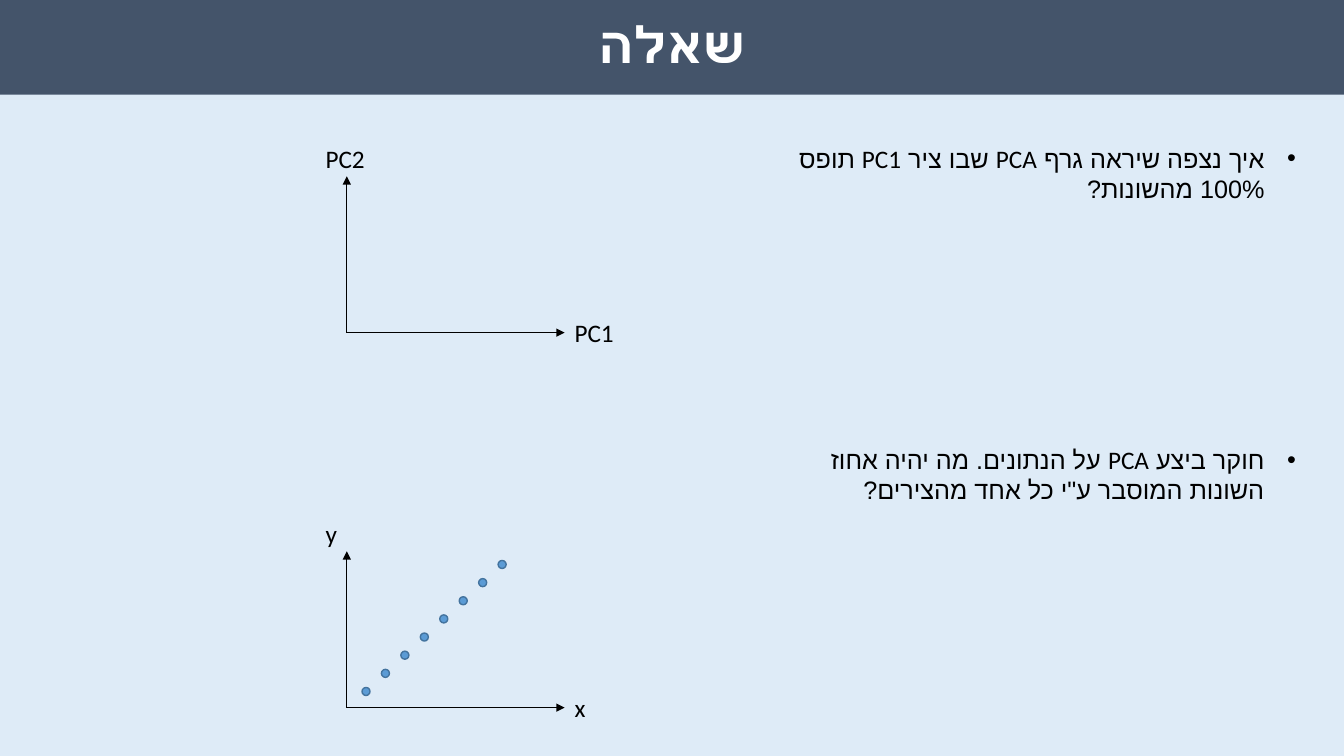
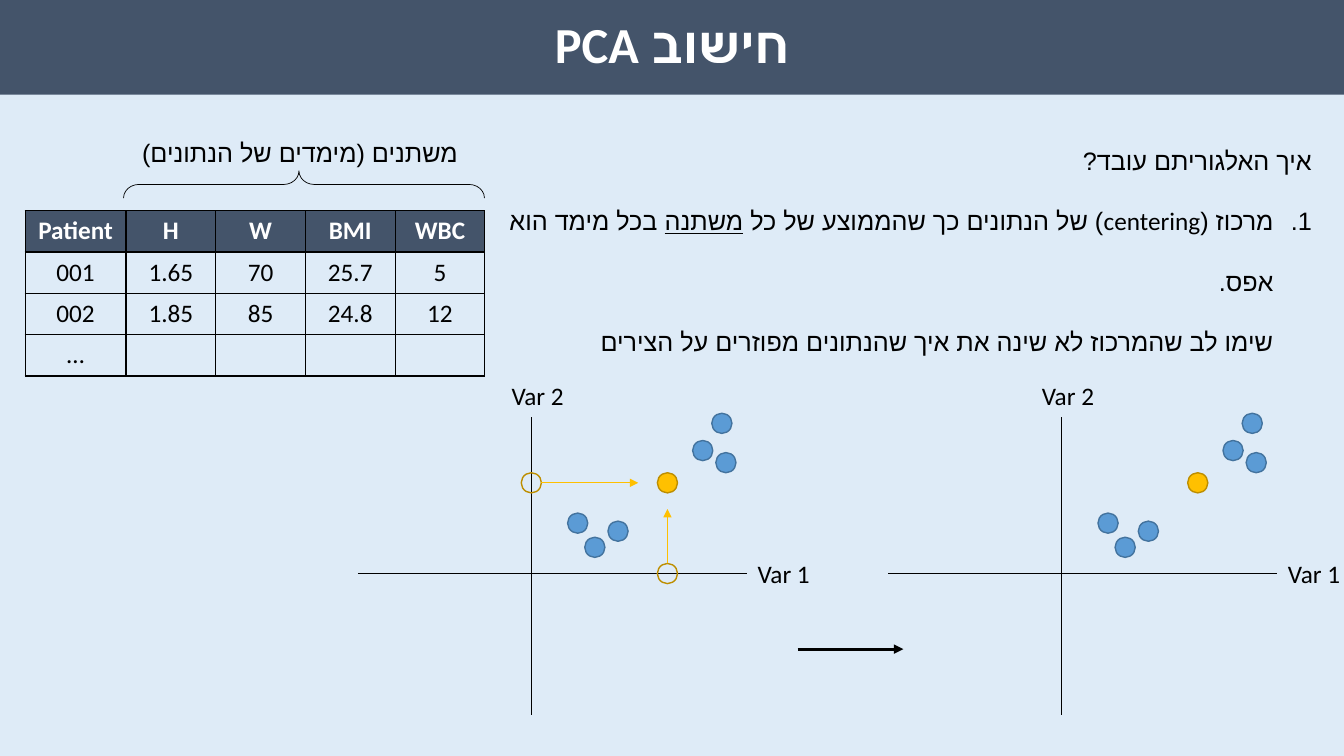
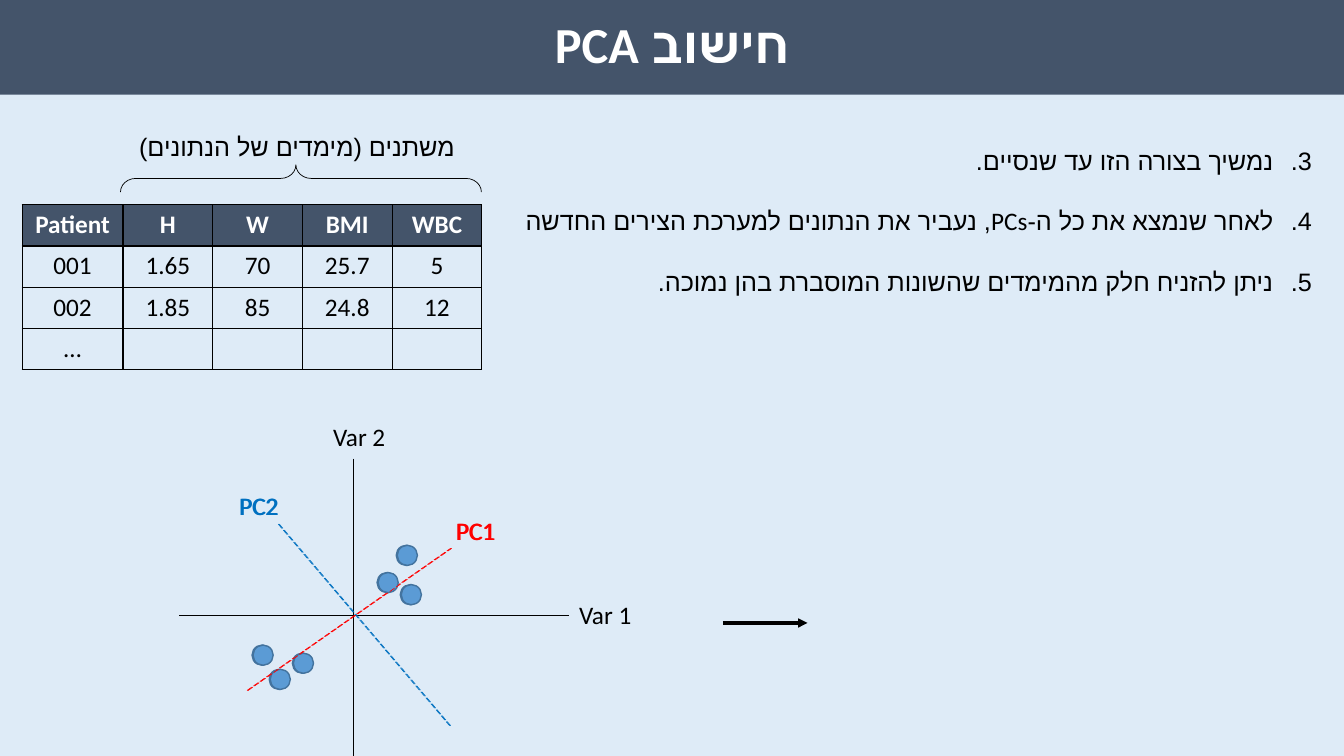
from lxml.etree import SubElement
from pptx import Presentation
from pptx.dml.color import RGBColor
from pptx.enum.dml import MSO_LINE
from pptx.enum.shapes import MSO_CONNECTOR, MSO_SHAPE
from pptx.enum.text import MSO_ANCHOR, MSO_AUTO_SIZE, PP_ALIGN
from pptx.oxml.ns import qn
from pptx.util import Inches, Pt

COLORS = {
    "background": "DEEBF7",
    "band": "44546A",
    "white": "FFFFFF",
    "black": "000000",
    "dot": "5B9BD5",
    "dot_line": "43739E",
    "mean": "FFC000",
    "mean_line": "BD8E00",
    "pc1": "FF0000",
    "pc2": "0070C0",
}
FONT = "Calibri"
HEBREW_FONT = "Arial"
SLIDE_WIDTH, SLIDE_HEIGHT = 13.33, 7.5
DOT_SIZE = 0.2
SAMPLES = [(1.7, -1.22), (1.89, -1.49), (1.93, -1.1), (0.46, -0.5), (0.63, -0.26), (0.86, -0.42)]
MEAN = (1.35, -0.9)
PATIENTS = [
    ("Patient", "H", "W", "BMI", "WBC"),
    ("001", "1.65", "70", "25.7", "5"),
    ("002", "1.85", "85", "24.8", "12"),
    ("…", "", "", "", ""),
]
COLUMN_WIDTHS = (1, 0.89, 0.89, 0.89, 0.89)
ROW_HEIGHT = 0.41


def color(name):
    """Return the named colour."""
    return RGBColor.from_string(COLORS[name])


def write(paragraph, text, size=18, ink="black", bold=False, align=PP_ALIGN.LEFT, rtl=False,
          spacing=None, before=None, underlined=None, hebrew_font=HEBREW_FONT):
    """Fill a paragraph with formatted text; line feeds become line breaks."""
    paragraph.alignment = align
    if spacing:
        paragraph.line_spacing = spacing
    if before:
        paragraph.space_before = Pt(before)
    if rtl:
        paragraph._p.get_or_add_pPr().set("rtl", "1")
    pieces = text.partition(underlined) if underlined else (text,)
    for piece in filter(None, pieces):
        for index, line in enumerate(piece.split("\n")):
            if index:
                paragraph.add_line_break()
            run = paragraph.add_run()
            run.text = line
            run.font.size = Pt(size)
            run.font.bold = bold
            run.font.underline = piece == underlined
            run.font.color.rgb = color(ink)
            run.font.name = FONT
            SubElement(run._r.get_or_add_rPr(), qn("a:cs"), typeface=hebrew_font)


def add_bullet(paragraph, indent, number=None):
    """Hang a dot, or a number counted from the given start, before a paragraph."""
    properties = paragraph._p.get_or_add_pPr()
    properties.set("marL", str(Inches(indent)))
    properties.set("indent", str(-Inches(indent)))
    SubElement(properties, qn("a:buFont"), typeface="Arial")
    if number:
        SubElement(properties, qn("a:buAutoNum"), type="arabicPeriod", startAt=str(number))
    else:
        SubElement(properties, qn("a:buChar"), char="•")


def add_text_frame(slide, left, top, width, height, wrap=True):
    """Add a text box and return its frame."""
    box = slide.shapes.add_textbox(Inches(left), Inches(top), Inches(width), Inches(height))
    frame = box.text_frame
    frame.word_wrap = wrap
    frame.auto_size = MSO_AUTO_SIZE.SHAPE_TO_FIT_TEXT
    return frame


def add_label(slide, text, left, top, width, height=0.4, wrap=True, **text_format):
    """Add a one-paragraph text box."""
    frame = add_text_frame(slide, left, top, width, height, wrap)
    write(frame.paragraphs[0], text, **text_format)
    return frame


def add_shape(slide, kind, left, top, width, height, fill=None, line=None, weight=1):
    """Add a preset shape without a shadow."""
    shape = slide.shapes.add_shape(kind, Inches(left), Inches(top), Inches(width), Inches(height))
    shape.shadow.inherit = False
    if fill:
        shape.fill.solid()
        shape.fill.fore_color.rgb = color(fill)
    else:
        shape.fill.background()
    if line:
        shape.line.color.rgb = color(line)
        shape.line.width = Pt(weight)
    else:
        shape.line.fill.background()
    return shape


def add_line(slide, start, end, ink="black", weight=0.5, arrow=False, dash=None):
    """Draw a straight line between two points."""
    line = slide.shapes.add_connector(MSO_CONNECTOR.STRAIGHT, *map(Inches, (*start, *end)))
    line.line.color.rgb = color(ink)
    line.line.width = Pt(weight)
    if dash:
        line.line.dash_style = dash
    if arrow:
        SubElement(line.line._get_or_add_ln(), qn("a:tailEnd"), type="triangle")
    SubElement(line._element.spPr, qn("a:effectLst"))


def add_dot(slide, x, y, size=DOT_SIZE, fill="dot", line="dot_line"):
    """Draw a dot centred on a point."""
    add_shape(slide, MSO_SHAPE.OVAL, x - size / 2, y - size / 2, size, size, fill, line)


def add_slide(presentation, title):
    """Add a slide with the shared background and title band."""
    slide = presentation.slides.add_slide(presentation.slide_layouts[6])
    slide.background.fill.solid()
    slide.background.fill.fore_color.rgb = color("background")
    band = add_shape(slide, MSO_SHAPE.RECTANGLE, 0, 0, SLIDE_WIDTH, 0.94, "band")
    band.text_frame.vertical_anchor = MSO_ANCHOR.MIDDLE
    write(band.text_frame.paragraphs[0], title, size=36, ink="white", bold=True,
          align=PP_ALIGN.CENTER, rtl=True, spacing=0.9, before=10, hebrew_font=FONT)
    return slide


def add_question(slide, text, top):
    """Add a bulleted question on the right."""
    frame = add_label(slide, text, 7.63, top, 5.32, 0.71, align=PP_ALIGN.RIGHT, rtl=True)
    add_bullet(frame.paragraphs[0], 0.31)


def add_quadrant(slide, x, y, x_name, y_name):
    """Draw two arrow axes that start at the given origin."""
    add_line(slide, (x, y), (x, y - 1.55), arrow=True)
    add_line(slide, (x, y), (x + 2.16, y), arrow=True)
    add_label(slide, x_name, x + 2.16, y - 0.2, 0.62)
    add_label(slide, y_name, x - 0.31, y - 1.93, 0.62)


def add_cross_axes(slide, x, y):
    """Draw the two variable axes crossing at the given origin."""
    add_line(slide, (x, y - 1.55), (x, y + 1.4))
    add_line(slide, (x - 1.72, y), (x + 2.14, y))
    for name, left, top in (("Var 1", 2.02, -0.2), ("Var 2", -0.42, -1.97)):
        add_label(slide, name, x + left, y + top, 0.84, align=PP_ALIGN.RIGHT, rtl=True)


def add_samples(slide, x, y):
    """Draw the samples relative to the given origin."""
    for dx, dy in SAMPLES:
        add_dot(slide, x + dx, y + dy)


def add_borders(cell):
    """Give a cell a thin black border on each side."""
    properties = cell._tc.get_or_add_tcPr()
    for index, side in enumerate(("lnL", "lnR", "lnT", "lnB")):
        border = properties.makeelement(qn(f"a:{side}"), {"w": str(Pt(1))})
        fill = SubElement(border, qn("a:solidFill"))
        SubElement(fill, qn("a:srgbClr"), val=COLORS["black"])
        properties.insert(index, border)


def add_patient_table(slide, left, top):
    """Add the patient table with its brace and heading above."""
    size = Inches(sum(COLUMN_WIDTHS)), Inches(ROW_HEIGHT * len(PATIENTS))
    table = slide.shapes.add_table(len(PATIENTS), len(COLUMN_WIDTHS),
                                   Inches(left), Inches(top), *size).table
    table.first_row = table.horz_banding = False
    for column, width in zip(table.columns, COLUMN_WIDTHS):
        column.width = Inches(width)
    for row_index, values in enumerate(PATIENTS):
        table.rows[row_index].height = Inches(ROW_HEIGHT)
        header = row_index == 0
        for column_index, value in enumerate(values):
            cell = table.cell(row_index, column_index)
            if header:
                cell.fill.solid()
                cell.fill.fore_color.rgb = color("band")
            else:
                cell.fill.background()
            add_borders(cell)
            write(cell.text_frame.paragraphs[0], value, ink="white" if header else "black",
                  bold=header, align=PP_ALIGN.CENTER)
    brace = add_shape(slide, MSO_SHAPE.RIGHT_BRACE, left + 2.63, top - 2.05, 0.27, 3.58,
                      line="black", weight=0.5)
    brace.rotation = 270
    brace.adjustments[0], brace.adjustments[1] = 0.56, 0.486
    add_label(slide, "משתנים (מימדים של הנתונים)", left + 0.95, top - 1.08, 3.44, 0.62,
              align=PP_ALIGN.RIGHT, rtl=True, spacing=2)


def add_steps(slide, left, width, steps, start, intro=None):
    """Add numbered steps, after an optional plain opening line."""
    frame = add_text_frame(slide, left, 1.09, width, 1.83)
    entries = [(intro, {})] if intro else []
    for index, (text, text_format) in enumerate(entries + steps):
        paragraph = frame.add_paragraph() if index else frame.paragraphs[0]
        write(paragraph, text, align=PP_ALIGN.RIGHT, rtl=True, spacing=2, **text_format)
        if text != intro:
            add_bullet(paragraph, 0.38, start)


def add_components(slide, x, y):
    """Draw the centred samples with both principal components."""
    add_samples(slide, x - MEAN[0], y - MEAN[1])
    components = (
        ("PC1", "pc1", (-1.04, 0.75), (0.98, -0.66), (0.93, -1.04)),
        ("PC2", "pc2", (-0.73, -0.9), (0.97, 1.1), (-1.22, -1.28)),
    )
    for name, ink, start, end, corner in components:
        add_line(slide, (x + start[0], y + start[1]), (x + end[0], y + end[1]), ink,
                 dash=MSO_LINE.LONG_DASH)
        add_label(slide, name, x + corner[0], y + corner[1], 0.59, wrap=False, ink=ink)


def build_question_slide(presentation):
    """Build the slide with the two questions."""
    slide = add_slide(presentation, "שאלה")
    add_question(slide, "איך נצפה שיראה גרף PCA שבו ציר PC1 תופס 100% מהשונות?", 1.37)
    add_question(slide, "חוקר ביצע PCA על הנתונים. מה יהיה אחוז השונות המוסבר ע\"י כל אחד מהצירים?", 4.36)
    add_quadrant(slide, 3.44, 3.3, "PC1", "PC2")
    add_quadrant(slide, 3.44, 7.02, "x", "y")
    for index in range(8):
        add_dot(slide, 3.63 + 1.35 * index / 7, 6.86 - 0.18 * index, size=0.08)


def build_centering_slide(presentation):
    """Build the slide that explains centering."""
    slide = add_slide(presentation, "חישוב PCA")
    step = ("מרכוז (centering) של הנתונים כך שהממוצע של כל משתנה בכל מימד הוא אפס.\n"
            "שימו לב שהמרכוז לא שינה את איך שהנתונים מפוזרים על הצירים")
    add_steps(slide, 4.64, 8.47, [(step, {"underlined": "משתנה"})], 1, "איך האלגוריתם עובד?")
    add_patient_table(slide, 0.25, 2.09)
    y = 5.69
    mean_y = y + MEAN[1]
    for x in (10.53, 5.27):
        add_samples(slide, x, y)
        add_cross_axes(slide, x, y)
        add_dot(slide, x + MEAN[0], mean_y, fill="mean", line="mean_line")
    mean_x = x + MEAN[0]
    for center in ((x, mean_y), (mean_x, y)):
        add_dot(slide, *center, fill=None, line="mean_line")
    add_line(slide, (x + 0.1, mean_y), (mean_x - 0.29, mean_y), "mean", arrow=True)
    add_line(slide, (mean_x, y - 0.1), (mean_x, mean_y + 0.26), "mean", arrow=True)
    add_line(slide, (7.91, 6.44), (8.96, 6.44), weight=2.25, arrow=True)


def build_components_slide(presentation):
    """Build the slide with the principal components."""
    slide = add_slide(presentation, "חישוב PCA")
    steps = (
        "נמשיך בצורה הזו עד שנסיים.",
        "לאחר שנמצא את כל ה-PCs, נעביר את הנתונים למערכת הצירים החדשה",
        "ניתן להזניח חלק מהמימדים שהשונות המוסברת בהן נמוכה.",
    )
    add_steps(slide, 4.88, 8.23, [(step, {}) for step in steps], 3)
    add_patient_table(slide, 0.22, 2.03)
    add_line(slide, (7.17, 6.18), (8.01, 6.18), weight=2.25, arrow=True)
    x, y = 3.5, 6.1
    add_cross_axes(slide, x, y)
    for shift in (-0.01, 0):
        add_components(slide, x + shift, y)


def main():
    """Build and save the presentation."""
    presentation = Presentation()
    presentation.slide_width = Inches(SLIDE_WIDTH)
    presentation.slide_height = Inches(SLIDE_HEIGHT)
    build_question_slide(presentation)
    build_centering_slide(presentation)
    build_components_slide(presentation)
    presentation.save("out.pptx")


if __name__ == "__main__":
    main()
